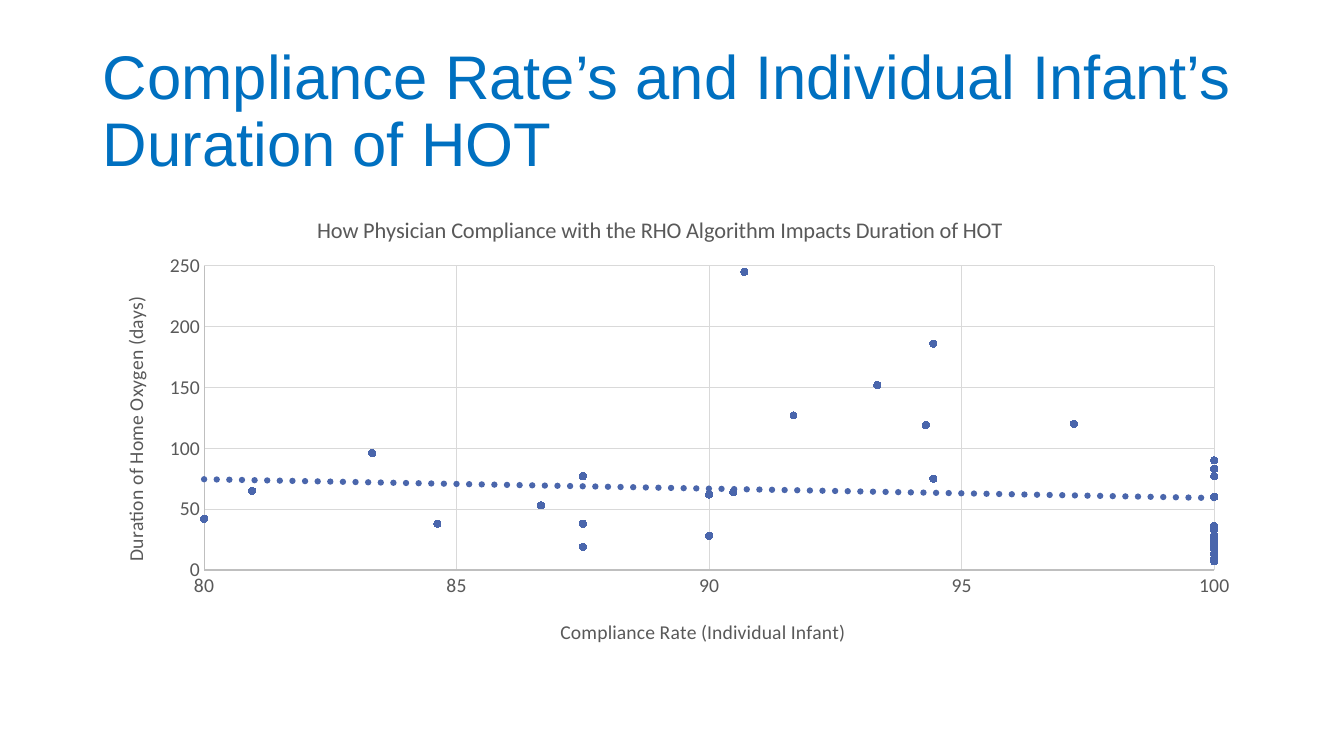
"""Build the slide on compliance rates and duration of home oxygen therapy."""
from dataclasses import dataclass
from typing import Any, NamedTuple

from lxml import etree
from pptx import Presentation
from pptx import util as u
from pptx.chart.data import XyChartData
from pptx.dml.color import RGBColor
from pptx.enum import chart as charts, text
from pptx.oxml import parse_xml
from pptx.oxml.ns import nsdecls, qn


@dataclass(frozen=True)
class Theme:
    heading: RGBColor = RGBColor(0x00, 0x70, 0xC0)
    label: RGBColor = RGBColor(0x59, 0x59, 0x59)
    axis: RGBColor = RGBColor(0xBF, 0xBF, 0xBF)
    grid: RGBColor = RGBColor(0xD9, 0xD9, 0xD9)
    data: RGBColor = RGBColor(0x4A, 0x66, 0xAC)
    heading_font: str = "Arial"
    chart_font: str = "Calibri"
    heading_size: int = 44
    title_size: int = 16
    label_size: int = 14
    hairline: float = 0.75
    trend_width: float = 4.5


class Area(NamedTuple):
    left: float
    top: float
    width: float
    height: float


@dataclass(frozen=True)
class AxisSpec:
    title: str
    minimum: float
    maximum: float
    step: float
    title_left: float
    title_top: float
    rotation: int


THEME = Theme()
SLIDE_WIDTH, SLIDE_HEIGHT = u.Inches(13.33), u.Inches(7.5)
HEADING_AREA = Area(0.069, 0.053, 0.863, 0.193)
CHART_AREA = Area(0.069, 0.247, 0.863, 0.627)
PLOT_AREA = Area(0.096, 0.167, 0.871, 0.642)
HEADING = "Compliance Rate’s and Individual Infant’s Duration of HOT"
CHART_TITLE = "How Physician Compliance with the RHO Algorithm Impacts Duration of HOT"
RATE_AXIS = AxisSpec("Compliance Rate (Individual Infant)", 80, 100, 5, 0.4, 0.902, 0)
DAYS_AXIS = AxisSpec("Duration of Home Oxygen (days)", 0, 250, 50, 0.022, 0.225, -5400000)
INFANTS = [
    (90, 62), (86.67, 53), (84.62, 38), (100, 27), (100, 90), (91.67, 127),
    (100, 28), (97.22, 120), (100, 25), (100, 83), (90.7, 245), (90, 28),
    (93.33, 152), (100, 60), (83.33, 96), (100, 13), (100, 9), (94.29, 119),
    (80.95, 65), (80, 42), (90.48, 64), (100, 19), (87.5, 19), (87.5, 77),
    (55, 40), (67, 60), (100, 22), (100, 77), (100, 28), (100, 23),
    (100, 77), (100, 33), (100, 7), (100, 17), (76, 119), (79, 112),
    (94.44, 75), (100, 36), (87.5, 38), (94.44, 186),
]


def apply(target: Any, values: dict[str, Any]) -> None:
    """Set each named attribute on the target."""
    for name, value in values.items():
        setattr(target, name, value)


def placed(area: Area) -> dict[str, int]:
    """Turn shares of the slide into lengths."""
    sizes = (SLIDE_WIDTH, SLIDE_HEIGHT) * 2
    return {name: int(share * size) for (name, share), size in zip(area._asdict().items(), sizes)}


def style_font(font: Any, name: str, size: float, color: RGBColor) -> None:
    """Give a font its face, size and colour."""
    apply(font, {"name": name, "size": u.Pt(size), "bold": False})
    font.color.rgb = color


def style_line(line: Any, color: RGBColor) -> None:
    """Draw a hairline in the given colour."""
    line.width = u.Pt(THEME.hairline)
    line.color.rgb = color


def set_layout(parent: Any, shares: dict[str, float], index: int, inner: bool = False) -> None:
    """Place a chart part by shares of the chart's size."""
    for previous in parent.findall(qn("c:layout")):
        parent.remove(previous)
    layout = parse_xml(f"<c:layout {nsdecls('c')}><c:manualLayout/></c:layout>")
    values = {"layoutTarget": "inner"} if inner else {}
    values |= {"xMode": "edge", "yMode": "edge"} | shares
    for name, value in values.items():
        etree.SubElement(layout[0], qn(f"c:{name}")).set("val", str(value))
    parent.insert(index, layout)


def write_title(title: Any, words: str, size: float, left: float, top: float, rotation: int = 0) -> None:
    """Write and place a title of the chart or of an axis."""
    paragraph = title.text_frame.paragraphs[0]
    run = paragraph.add_run()
    run.text = words
    style_font(run.font, THEME.chart_font, size, THEME.label)
    element = title._element
    next(element.iter(qn("a:bodyPr"))).set("rot", str(rotation))
    set_layout(element, {"x": left, "y": top}, 1)


def style_axis(axis: Any, spec: AxisSpec) -> None:
    """Set the scale, lines and labels of an axis."""
    apply(axis, {
        "minimum_scale": spec.minimum, "maximum_scale": spec.maximum, "major_unit": spec.step,
        "major_tick_mark": charts.XL_TICK_MARK.NONE, "minor_tick_mark": charts.XL_TICK_MARK.NONE,
        "has_major_gridlines": True, "has_title": True,
    })
    apply(axis.tick_labels, {"number_format": "General", "number_format_is_linked": False})
    style_font(axis.tick_labels.font, THEME.chart_font, THEME.label_size, THEME.label)
    style_line(axis.format.line, THEME.axis)
    style_line(axis.major_gridlines.format.line, THEME.grid)
    write_title(axis.axis_title, spec.title, THEME.label_size,
                spec.title_left, spec.title_top, spec.rotation)


def add_trend(series: Any) -> None:
    """Add a dotted linear trend line to a series."""
    trend = parse_xml(
        f"<c:trendline {nsdecls('c', 'a')}><c:spPr>"
        f'<a:ln w="{u.Pt(THEME.trend_width)}" cap="rnd"><a:solidFill><a:srgbClr val="{THEME.data}"/>'
        '</a:solidFill><a:prstDash val="sysDot"/></a:ln></c:spPr><c:trendlineType val="linear"/>'
        '<c:dispRSqr val="0"/><c:dispEq val="0"/></c:trendline>')
    series._element.find(qn("c:xVal")).addprevious(trend)


def add_scatter(slide: Any) -> None:
    """Add the scatter chart of the infants."""
    data = XyChartData()
    infants = data.add_series("Series 1")
    for rate, days in INFANTS:
        infants.add_data_point(rate, days)
    chart = slide.shapes.add_chart(
        charts.XL_CHART_TYPE.XY_SCATTER, *placed(CHART_AREA).values(), data).chart
    apply(chart, {"has_legend": False, "has_title": True})
    style_font(chart.font, THEME.chart_font, THEME.label_size, THEME.label)
    write_title(chart.chart_title, CHART_TITLE, THEME.title_size, 0.19, 0.05)
    style_axis(chart.category_axis, RATE_AXIS)
    style_axis(chart.value_axis, DAYS_AXIS)
    plot = chart.plots[0]
    plot.vary_by_categories = False
    series = plot.series[0]
    series.format.line.fill.background()
    apply(series.marker, {"style": charts.XL_MARKER_STYLE.CIRCLE, "size": 5})
    series.marker.format.fill.solid()
    series.marker.format.fill.fore_color.rgb = THEME.data
    style_line(series.marker.format.line, THEME.data)
    add_trend(series)
    plot_shares = dict(zip("xywh", PLOT_AREA))
    set_layout(plot._element.getparent(), plot_shares, 0, inner=True)


def add_heading(slide: Any) -> None:
    """Move and format the title placeholder."""
    heading = slide.shapes.title
    apply(heading, placed(HEADING_AREA))
    frame = heading.text_frame
    frame.text = HEADING
    apply(frame, {"vertical_anchor": text.MSO_ANCHOR.MIDDLE, "word_wrap": True,
                  "auto_size": text.MSO_AUTO_SIZE.NONE})
    paragraph = frame.paragraphs[0]
    apply(paragraph, {"alignment": text.PP_ALIGN.LEFT, "line_spacing": 0.9})
    style_font(paragraph.runs[0].font, THEME.heading_font, THEME.heading_size, THEME.heading)


def main() -> None:
    """Build and save the presentation."""
    presentation = Presentation()
    apply(presentation, {"slide_width": SLIDE_WIDTH, "slide_height": SLIDE_HEIGHT})
    slide = presentation.slides.add_slide(presentation.slide_layouts.get_by_name("Title Only"))
    add_heading(slide)
    add_scatter(slide)
    presentation.save("out.pptx")


if __name__ == "__main__":
    main()
